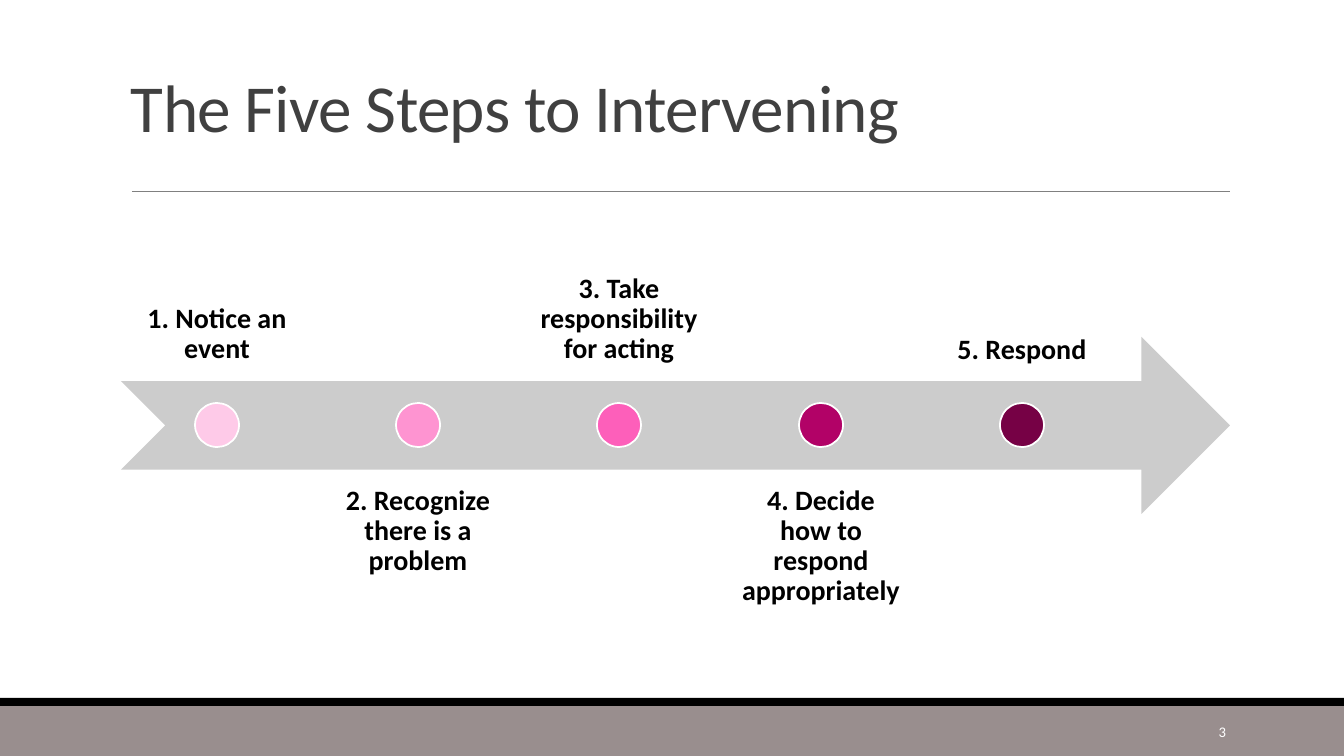
from pptx import Presentation
from pptx import util as u
from pptx.dml.color import RGBColor
from pptx.enum import shapes, text
from pptx.oxml.ns import qn
from lxml import etree

EMU_PER_PX = 914400 / 100.8
SLIDE_WIDTH, SLIDE_HEIGHT = 1344, 756

STEPS = [
    ("1. Notice an event", "FECAE8"),
    ("2. Recognize there is a problem", "FE94D1"),
    ("3. Take responsibility for acting", "FD5FBA"),
    ("4. Decide how to respond appropriately", "B20267"),
    ("5. Respond", "760145"),
]
ARROW_LEFT, ARROW_TOP, ARROW_WIDTH, ARROW_HEIGHT = 121, 337, 1109, 177
STEPS_SPAN = 805
LABEL_WIDTH, LABEL_HEIGHT = 192, 177
LABEL_TOP_ABOVE, LABEL_TOP_BELOW = 204, 470
DOT_SIZE = 44


def px(length):
    return u.Emu(round(length * EMU_PER_PX))


def color(hex_string):
    return RGBColor.from_string(hex_string)


class SlideBuilder:
    font_name = "Calibri"

    def __init__(self, slide):
        self.slide = slide

    def box(self, kind, left, top, width, height, fill, outline=None):
        shape = self.slide.shapes.add_shape(kind, px(left), px(top), px(width), px(height))
        shape.shadow.inherit = False
        shape.fill.solid()
        shape.fill.fore_color.rgb = color(fill)
        if outline:
            shape.line.color.rgb = color(outline)
            shape.line.width = u.Pt(1.25)
        else:
            shape.line.fill.background()
        return shape

    def rule(self, left, right, y, stroke):
        line = self.slide.shapes.add_connector(
            shapes.MSO_CONNECTOR.STRAIGHT, px(left), px(y), px(right), px(y))
        line.line.color.rgb = color(stroke)
        line.line.width = u.Pt(0.5)
        etree.SubElement(line._element.spPr, qn("a:effectLst"))
        return line

    def label(self, wording, left, top, width, height, size, ink, anchor,
              align=text.PP_ALIGN.LEFT, bold=False, spacing=1.0, inset=(10, 5), tracking=0):
        """Add a text box; inset is (horizontal, vertical), tracking is in points."""
        shape = self.slide.shapes.add_textbox(px(left), px(top), px(width), px(height))
        frame = shape.text_frame
        frame.word_wrap = True
        frame.vertical_anchor = anchor
        frame.margin_left = frame.margin_right = px(inset[0])
        frame.margin_top = frame.margin_bottom = px(inset[1])
        frame.text = wording
        paragraph = frame.paragraphs[0]
        paragraph.alignment = align
        paragraph.line_spacing = spacing
        run = paragraph.runs[0]
        run.font.name = self.font_name
        run.font.size = u.Pt(size)
        run.font.bold = bold
        run.font.color.rgb = color(ink)
        if tracking:
            run.font._element.set("spc", str(round(tracking * 100)))
        return shape

    def step(self, index, wording, fill):
        """Add a dot on the arrow, with its label above or below in turn."""
        left = ARROW_LEFT + round(index * STEPS_SPAN / (len(STEPS) - 1))
        above = index % 2 == 0
        self.label(wording, left, LABEL_TOP_ABOVE if above else LABEL_TOP_BELOW,
                   LABEL_WIDTH, LABEL_HEIGHT, 20, "000000",
                   text.MSO_ANCHOR.BOTTOM if above else text.MSO_ANCHOR.TOP,
                   text.PP_ALIGN.CENTER, bold=True, spacing=0.9, inset=(16, 16))
        self.box(shapes.MSO_SHAPE.OVAL, left + (LABEL_WIDTH - DOT_SIZE) // 2,
                 ARROW_TOP + (ARROW_HEIGHT - DOT_SIZE) // 2,
                 DOT_SIZE, DOT_SIZE, fill, outline="FFFFFF")


def main():
    presentation = Presentation()
    presentation.slide_width = px(SLIDE_WIDTH)
    presentation.slide_height = px(SLIDE_HEIGHT)
    builder = SlideBuilder(presentation.slides.add_slide(presentation.slide_layouts[6]))

    builder.box(shapes.MSO_SHAPE.RECTANGLE, 0, 706, SLIDE_WIDTH, 50, "998E8E")
    builder.box(shapes.MSO_SHAPE.RECTANGLE, 0, 698, SLIDE_WIDTH, 8, "000000")
    builder.rule(132, 1230, 191, "808080")
    builder.label("The Five Steps to Intervening", 121, 31, 1109, 120, 48, "404040",
                  text.MSO_ANCHOR.BOTTOM, spacing=0.85, tracking=-0.5)

    builder.box(shapes.MSO_SHAPE.NOTCHED_RIGHT_ARROW, ARROW_LEFT, ARROW_TOP,
                ARROW_WIDTH, ARROW_HEIGHT, "CCCCCC")
    for index, (wording, fill) in enumerate(STEPS):
        builder.step(index, wording, fill)

    builder.label("3", 1092, 712, 144, 40, 10.5, "FFFFFF",
                  text.MSO_ANCHOR.MIDDLE, text.PP_ALIGN.RIGHT)
    presentation.save("out.pptx")


if __name__ == "__main__":
    main()
